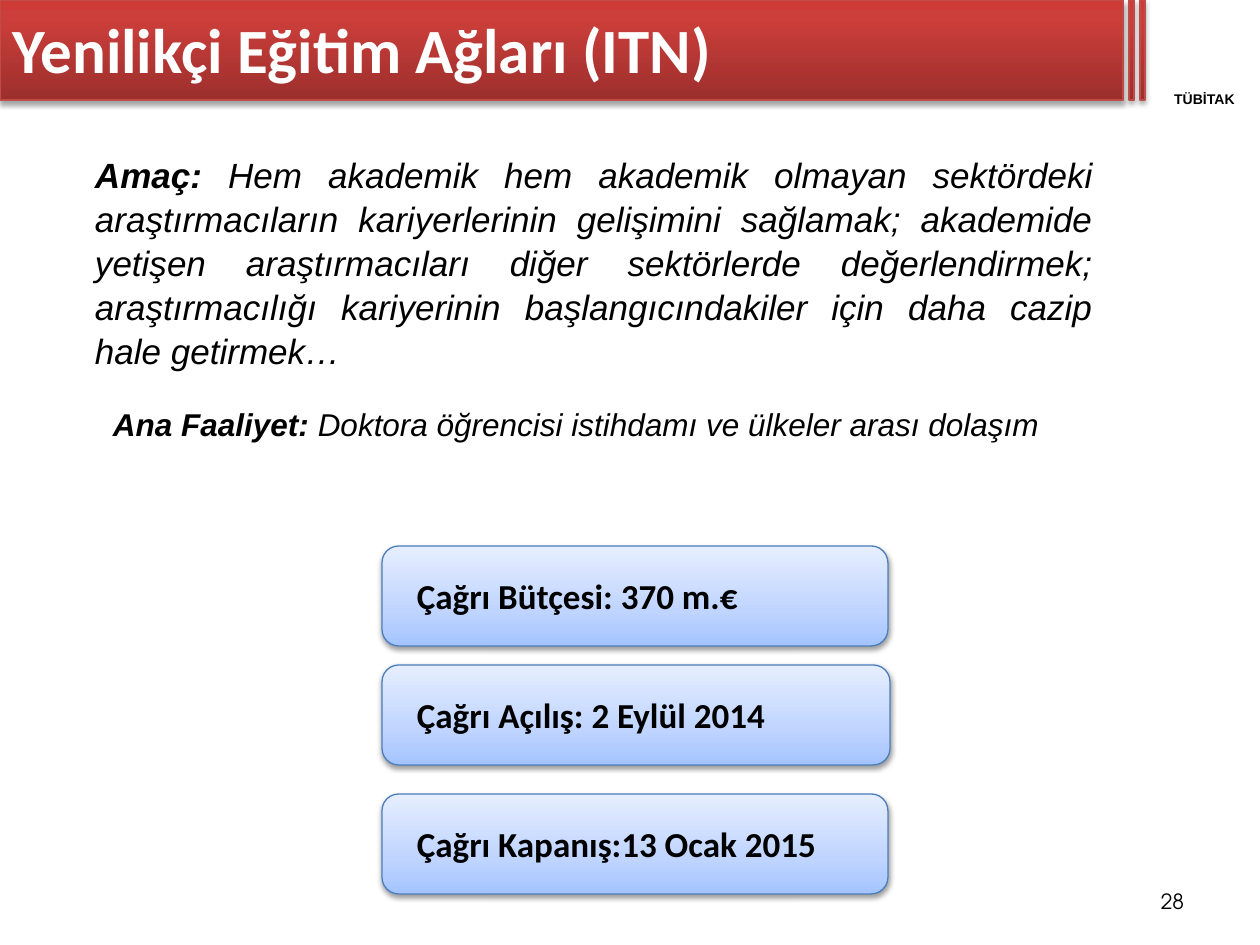
from lxml import etree
from pptx import Presentation
from pptx.dml.color import RGBColor
from pptx.enum.shapes import MSO_SHAPE
from pptx.enum.text import MSO_ANCHOR, PP_ALIGN
from pptx.oxml.ns import qn
from pptx.util import Pt

RECT, ROUNDED = MSO_SHAPE.RECTANGLE, MSO_SHAPE.ROUNDED_RECTANGLE
TOP, MIDDLE = MSO_ANCHOR.TOP, MSO_ANCHOR.MIDDLE
LEFT, CENTER, RIGHT, JUSTIFY = (
    PP_ALIGN.LEFT, PP_ALIGN.CENTER, PP_ALIGN.RIGHT, PP_ALIGN.JUSTIFY)

# Content
TITLE = "Yenilikçi Eğitim Ağları (ITN)"
AGENCY = "TÜBİTAK"
PAGE = "28"
AIM = ("Amaç: ",
       "Hem akademik hem akademik olmayan sektördeki araştırmacıların "
       "kariyerlerinin gelişimini sağlamak; akademide yetişen araştırmacıları "
       "diğer sektörlerde değerlendirmek; araştırmacılığı kariyerinin "
       "başlangıcındakiler için daha cazip hale getirmek…")
ACTIVITY = ("Ana Faaliyet: ",
            "Doktora öğrencisi istihdamı ve ülkeler arası dolaşım")
CALL_CARDS = [  # text, top, width
    ("Çağrı Bütçesi: 370 m.€", 546, 506),
    ("Çağrı Açılış: 2 Eylül 2014", 665, 508),
    ("Çağrı Kapanış:13 Ocak 2015", 794, 506),
]
HEADER_BANDS = [(0, 1123), (1129, 5), (1140, 5)]  # left, width

COLORS = {"black": "000000", "white": "FFFFFF",
          "red_line": "BF4C48", "blue_line": "4B7EBC"}
# Gradient stops run from bottom to top
RED = [(0, "9C2F2D"), (80, "CB3E3A"), (100, "CE3B37")]
BLUE = [(0, "A4C4FF"), (35, "BFD4FF"), (100, "E6EEFF")]
BAND_HEIGHT, CARD_LEFT, CARD_HEIGHT = 100, 382, 100
DEFAULT_INSETS = (13, 6)


def px(length):
    return round(length * 914400 / 126)


def rgb(name):
    return RGBColor.from_string(COLORS[name])


def add_color(parent, color, alpha=None):
    node = etree.SubElement(parent, qn("a:srgbClr"), val=color)
    if alpha:
        etree.SubElement(node, qn("a:alpha"), val=str(alpha * 1000))


def add_panel(kind, box, stops, line, shadow_alpha, shadow_distance):
    panel = slide.shapes.add_shape(kind, *map(px, box))
    panel.fill.gradient()
    panel.fill.gradient_angle = 90
    stop_list = panel.fill._xPr.find(".//" + qn("a:gsLst"))
    for old_stop in list(stop_list):
        stop_list.remove(old_stop)
    for position, color in stops:
        stop = etree.SubElement(stop_list, qn("a:gs"), pos=str(position * 1000))
        add_color(stop, color)
    panel.line.color.rgb = rgb(line)
    panel.line.width = Pt(0.75)
    # Soft shadow straight below
    panel.shadow.inherit = False
    effects = panel._element.spPr.find(qn("a:effectLst"))
    shadow = etree.SubElement(
        effects, qn("a:outerShdw"), blurRad=str(Pt(3.1)),
        dist=str(Pt(shadow_distance)), dir="5400000", rotWithShape="0")
    add_color(shadow, COLORS["black"], shadow_alpha)
    return panel


def write(shape, parts, size, font, color="black", bold=None, italic=None,
          align=LEFT, anchor=TOP, insets=DEFAULT_INSETS, wrap=True, spacing=None):
    frame = shape.text_frame
    frame.word_wrap = wrap
    frame.vertical_anchor = anchor
    frame.margin_left = frame.margin_right = px(insets[0])
    frame.margin_top = frame.margin_bottom = px(insets[1])
    paragraph = frame.paragraphs[0]
    paragraph.alignment = align
    if spacing:
        paragraph.line_spacing = spacing
    paragraph.font.size = Pt(size)
    paragraph.font.name = font
    paragraph.font.bold = bold
    paragraph.font.italic = italic
    paragraph.font.color.rgb = rgb(color)
    for part in parts:
        paragraph.add_run().text = part
    return paragraph


def add_text(box, parts, size, font, **style):
    return write(slide.shapes.add_textbox(*map(px, box)), parts, size, font, **style)


prs = Presentation()
prs.slide_width, prs.slide_height = px(1260), px(945)
slide = prs.slides.add_slide(prs.slide_layouts[6])

# Header bands, title and agency label
for left, width in HEADER_BANDS:
    add_panel(RECT, (left, 0, width, BAND_HEIGHT), RED, "red_line", 35, 1.8)
add_text((0, 0, 1126, 97), [TITLE], 36, "Calibri", color="white", bold=True,
         anchor=MIDDLE)
add_text((1150, 91, 109, 16), [AGENCY], 8, "Arial", bold=True, align=CENTER,
         insets=(0, 0))

# Aim and main activity, each with a bold lead-in
aim = add_text((82, 145, 1024, 224), AIM, 20, "Arial", italic=True,
               align=JUSTIFY, spacing=1.05)
activity = add_text((100, 397, 956, 89), ACTIVITY, 18, "Arial", italic=True,
                    wrap=False, spacing=1.05)
for statement in (aim, activity):
    statement.runs[0].font.bold = True

# Call cards
for text, top, width in CALL_CARDS:
    card = add_panel(ROUNDED, (CARD_LEFT, top, width, CARD_HEIGHT), BLUE,
                     "blue_line", 38, 1.6)
    write(card, [text], 20, "Calibri", bold=True, anchor=MIDDLE, insets=(30, 26))

# Page number
add_text((903, 876, 294, 50), [PAGE], 12, "TeX Gyre Adventor", align=RIGHT,
         anchor=MIDDLE)

prs.save("out.pptx")
